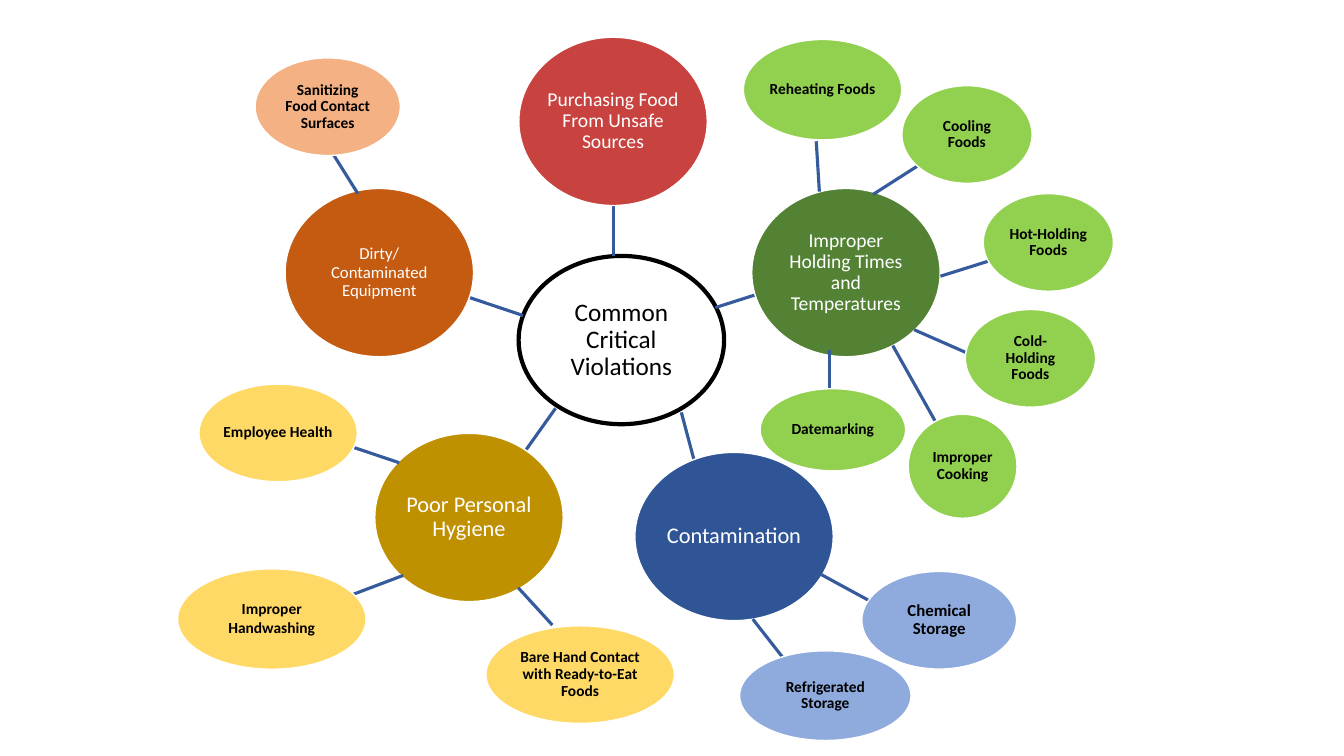
import dataclasses
import typing

import lxml.etree
import pptx
import pptx.dml.color
import pptx.enum.shapes
import pptx.enum.text
import pptx.oxml.ns
import pptx.util

Cm = pptx.util.Cm
Pt = pptx.util.Pt


@dataclasses.dataclass(frozen=True)
class Theme:
    font: str = "Calibri"
    white: str = "FFFFFF"
    black: str = "000000"
    link: str = "365B9D"
    purchasing: str = "C84340"
    holding: str = "548235"
    holding_light: str = "92D050"
    contamination: str = "2F5597"
    contamination_light: str = "8FAADC"
    hygiene: str = "BF9000"
    hygiene_light: str = "FFD966"
    equipment: str = "C55A11"
    equipment_light: str = "F4B183"
    title_size: float = 18
    hub_large: float = 16
    hub_medium: float = 14
    small: float = 12
    detail: float = 11
    outline: float = 1
    title_outline: float = 3
    link_width: float = 2.25


class Link(typing.NamedTuple):
    x1: float
    y1: float
    x2: float
    y2: float


@dataclasses.dataclass(frozen=True)
class Bubble:
    """Ellipse given by its centre and size in centimetres."""
    text: str
    x: float
    y: float
    w: float
    h: float
    fill: str
    size: float
    link: typing.Optional[Link] = None
    color: str = "000000"
    bold: bool = True
    outline: str = "FFFFFF"
    outline_width: float = 1


T = Theme()
TEXT_MARGIN = 0.61   # from the ellipse's bounding box to its text
ELLIPSE_INSET = 0.1464  # share of the width an ellipse keeps clear by itself


def hub(text: str, x: float, y: float, fill: str, size: float,
        link: Link, w: float = 4.75) -> Bubble:
    return Bubble(text, x, y, w, 4.24, fill, size, link, T.white, False)


def detail(text: str, x: float, y: float, w: float, fill: str, link: Link,
           h: float = 2.46, size: float = T.detail) -> Bubble:
    return Bubble(text, x, y, w, h, fill, size, link)


BUBBLES = [
    # Central topic
    Bubble("Common Critical Violations", 15.66, 8.57, 5.18, 4.24, T.white, T.title_size,
           bold=False, outline=T.black, outline_width=T.title_outline),
    # Main categories
    hub("Purchasing Food From Unsafe Sources", 15.45, 3.06, T.purchasing, T.hub_medium,
        Link(15.45, 6.45, 15.45, 5.18)),
    hub("Improper Holding Times and Temperatures", 21.32, 6.87, T.holding, T.hub_medium,
        Link(18.03, 7.75, 19.38, 7.32)),
    hub("Contamination", 18.5, 13.52, T.contamination, T.hub_large,
        Link(17.17, 10.39, 17.5, 11.63), w=5),
    hub("Poor Personal Hygiene", 11.82, 13.04, T.hygiene, T.hub_large,
        Link(14, 10.29, 13.26, 11.33)),
    hub("Dirty/ Contaminated Equipment", 9.56, 6.87, T.equipment, T.small,
        Link(13.18, 7.95, 11.81, 7.49)),
    # Equipment
    detail("Sanitizing Food Contact Surfaces", 8.26, 2.69, 3.66, T.equipment_light,
           Link(9.02, 4.88, 8.33, 3.78)),
    # Hygiene
    detail("Bare Hand Contact with Ready-to-Eat Foods", 14.62, 17, 4.75, T.hygiene_light,
           Link(13.06, 14.81, 13.92, 15.75)),
    detail("Improper\nHandwashing", 6.85, 15.6, 4.75, T.hygiene_light,
           Link(10.16, 14.5, 8.81, 15.01), h=2.53),
    detail("Employee Health", 7.01, 10.91, 3.99, T.hygiene_light,
           Link(10.06, 11.66, 8.69, 11.2)),
    # Holding times and temperatures
    detail("Cold-Holding Foods", 25.97, 9.03, 3.28, T.holding_light,
           Link(23.04, 8.31, 24.36, 8.89)),
    detail("Hot-Holding Foods", 26.42, 6.11, 3.28, T.holding_light,
           Link(23.7, 6.96, 25.07, 6.53)),
    detail("Cooling Foods", 24.37, 3.39, 3.28, T.holding_light,
           Link(22, 4.9, 23.19, 4.14)),
    detail("Reheating Foods", 20.73, 2.26, 3.99, T.holding_light,
           Link(20.65, 4.83, 20.57, 3.56), h=2.53),
    detail("Improper Cooking", 24.26, 11.75, 2.74, T.holding_light,
           Link(22.5, 8.71, 23.6, 10.67), h=2.62),
    detail("Datemarking", 20.99, 10.83, 3.67, T.holding_light,
           Link(20.9, 8.81, 20.9, 9.8), h=2.07),
    # Contamination
    detail("Chemical Storage", 23.67, 15.63, 3.9, T.contamination_light,
           Link(20.7, 14.48, 21.95, 15.16), size=T.small),
    detail("Refrigerated Storage", 20.8, 17.53, 4.32, T.contamination_light,
           Link(18.97, 15.6, 19.76, 16.61), h=2.26),
]


def rgb(value: str) -> pptx.dml.color.RGBColor:
    return pptx.dml.color.RGBColor.from_string(value)


def apply(target: typing.Any, formats: dict[str, typing.Any]) -> None:
    for name, value in formats.items():
        setattr(target, name, value)


def draw_link(shapes: typing.Any, link: Link) -> None:
    cxn = shapes.add_connector(pptx.enum.shapes.MSO_CONNECTOR.STRAIGHT,
                               *(Cm(v) for v in link))
    cxn.line.color.rgb = rgb(T.link)
    cxn.line.width = Pt(T.link_width)
    sp_pr = cxn._element.spPr
    lxml.etree.SubElement(sp_pr, pptx.oxml.ns.qn("a:effectLst"))


def draw_bubble(shapes: typing.Any, b: Bubble) -> None:
    sp = shapes.add_shape(pptx.enum.shapes.MSO_SHAPE.OVAL, Cm(b.x - b.w / 2),
                          Cm(b.y - b.h / 2), Cm(b.w), Cm(b.h))
    sp.shadow.inherit = False
    sp.fill.solid()
    sp.fill.fore_color.rgb = rgb(b.fill)
    sp.line.color.rgb = rgb(b.outline)
    sp.line.width = Pt(b.outline_width)

    # Text
    side = Cm(TEXT_MARGIN - ELLIPSE_INSET * b.w)
    tf = sp.text_frame
    apply(tf, {"word_wrap": True, "margin_left": side, "margin_right": side,
               "margin_top": 0, "margin_bottom": 0,
               "vertical_anchor": pptx.enum.text.MSO_ANCHOR.MIDDLE})
    tf.text = b.text
    for i, p in enumerate(tf.paragraphs):
        apply(p, {"alignment": pptx.enum.text.PP_ALIGN.CENTER, "line_spacing": 0.9})
        if i:
            p.space_before = Pt(0.15 * b.size)
        for r in p.runs:
            apply(r.font, {"name": T.font, "size": Pt(b.size), "bold": b.bold})
            r.font.color.rgb = rgb(b.color)


def main() -> None:
    prs = pptx.Presentation()
    apply(prs, {"slide_width": Cm(33.87), "slide_height": Cm(19.05)})
    s = prs.slides.add_slide(prs.slide_layouts[6])
    for b in BUBBLES:
        if b.link:
            draw_link(s.shapes, b.link)
        draw_bubble(s.shapes, b)
    prs.save("out.pptx")


if __name__ == "__main__":
    main()
